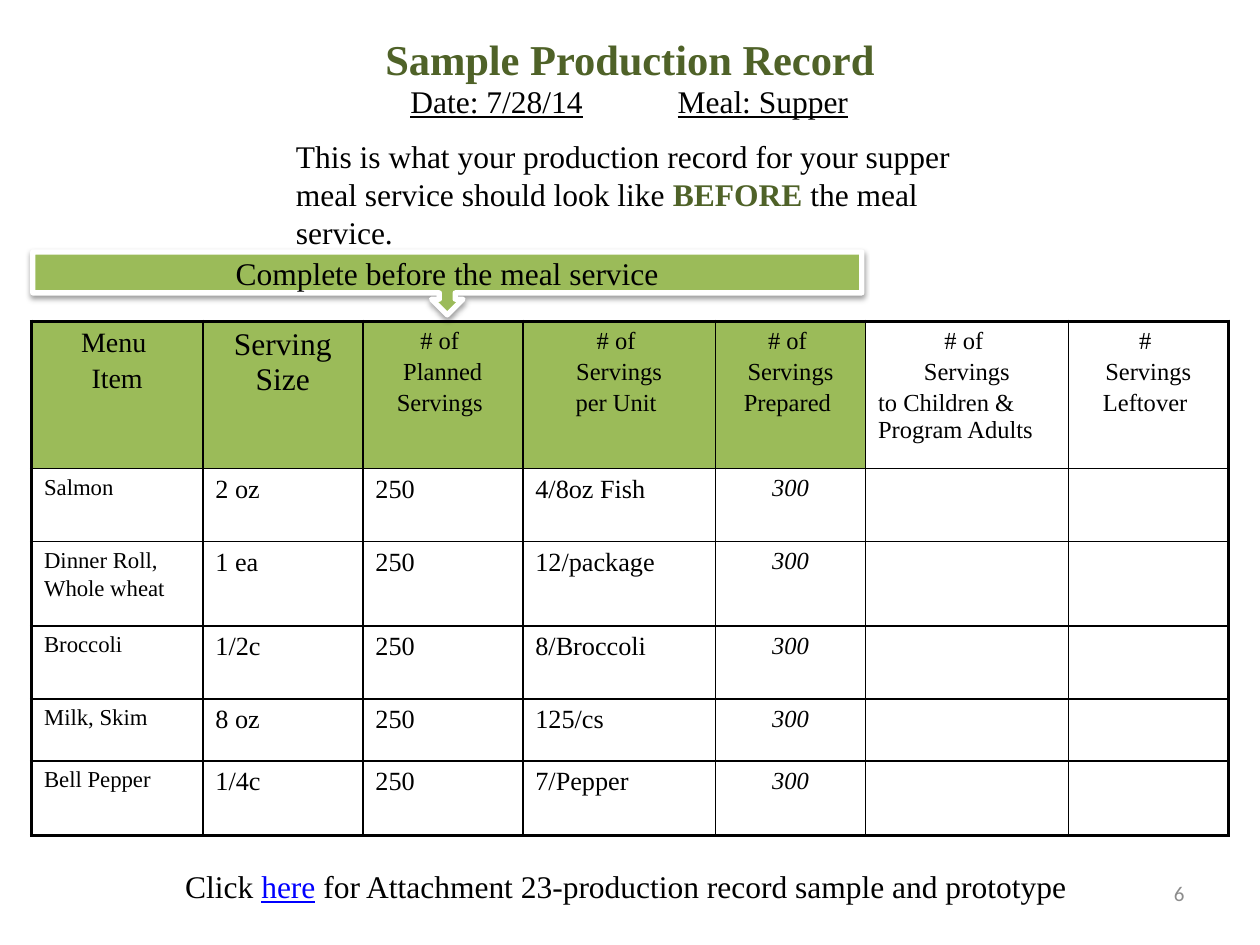
from lxml import etree
from pptx import Presentation
from pptx.dml.color import RGBColor
from pptx.enum.shapes import MSO_SHAPE
from pptx.enum.text import MSO_ANCHOR, PP_ALIGN
from pptx.oxml.ns import qn
from pptx.util import Inches, Pt

LEFT, MID, RIGHT = PP_ALIGN.LEFT, PP_ALIGN.CENTER, PP_ALIGN.RIGHT
TOP, CENTER = MSO_ANCHOR.TOP, MSO_ANCHOR.MIDDLE
CALLOUT = MSO_SHAPE.DOWN_ARROW_CALLOUT
SERIF = "Times New Roman"
BLACK, WHITE, GREEN, OLIVE = "000000", "FFFFFF", "9BBB59", "4F6228"
BLUE, GRAY = "0000FF", "8C8C8C"
THIN, THICK = 1, 2.25

BOXES = [
    ((0.5, 0.21, 9, 0.49), MID, TOP, 24.3,
     [("Sample Production Record", OLIVE, {"bold": True})]),
    ((2.25, 1.04, 5.92, 1.01), LEFT, TOP, 18,
     [("This is what your production record for your supper meal service "
       "should look like ", BLACK, {}),
      ("BEFORE ", OLIVE, {"bold": True}),
      ("the meal service.", BLACK, {})]),
    ((0.29, 6.83, 9.42, 0.4), MID, TOP, 18,
     [("Click ", BLACK, {}),
      ("here", BLUE, {"underline": True}),
      (" for Attachment 23-production record sample and prototype ", BLACK, {})]),
    ((7.17, 6.83, 2.33, 0.52), RIGHT, CENTER, 12,
     [("6", GRAY, {"name": "Calibri"})]),
]
DATE = "Date: 7/28/14\tMeal: Supper"
DATE_BOX, DATE_TAB = (3.16, 0.6, 3.9, 0.39), 2.12
BANNER = "Complete before the meal service"

HEADS = [
    (16, ["Menu ", "Item"]),
    (18, ["Serving Size"]),
    (14, ["# of ", "Planned", "Servings "]),
    (14, ["# of ", "Servings", "per Unit "]),
    (14, ["# of ", "Servings", "Prepared "]),
    (14, ["# of ", "Servings", "to Children & Program Adults "]),
    (14, ["# ", "Servings", "Leftover "]),
]
MEALS = [
    (["Salmon"], "2 oz", "250", "4/8oz Fish", "300"),
    (["Dinner Roll,", "Whole wheat"], "1 ea", "250", "12/package", "300"),
    (["Broccoli"], "1/2c", "250", "8/Broccoli", "300"),
    (["Milk, Skim"], "8 oz", "250", "125/cs", "300"),
    (["Bell Pepper"], "1/4c", "250", "7/Pepper", "300"),
]
COLS = [1.36, 1.27, 1.27, 1.53, 1.19, 1.61, 1.27]
ROWS = [1.17, 0.58, 0.67, 0.58, 0.49, 0.59]
FILLED = 5


def rgb(code):
    return RGBColor.from_string(code)


def add_run(para, text, size, color=BLACK, style=None):
    run = para.add_run()
    run.text = text
    run.font.color.rgb = rgb(color)
    look = {"name": SERIF, "size": Pt(size), **(style or {})}
    for key, value in look.items():
        setattr(run.font, key, value)


def add_box(slide, place, align, anchor, size, runs):
    box = slide.shapes.add_textbox(*map(Inches, place))
    frame = box.text_frame
    frame.word_wrap = True
    frame.vertical_anchor = anchor
    para = frame.paragraphs[0]
    para.alignment = align
    for text, color, style in runs:
        add_run(para, text, size, color, style)
    return para


def add_node(parent, tag, **attrs):
    return etree.SubElement(parent, qn(tag), attrs)


def add_date(slide):
    runs = [(DATE, BLACK, {"underline": True})]
    para = add_box(slide, DATE_BOX, LEFT, TOP, 18, runs)
    tabs = add_node(para._p.get_or_add_pPr(), "a:tabLst")
    add_node(tabs, "a:tab", pos=str(Inches(DATE_TAB)), algn="l")


def add_banner(slide):
    place = map(Inches, (0.26, 2, 6.58, 0.5))
    shape = slide.shapes.add_shape(CALLOUT, *place)
    shape.fill.solid()
    shape.fill.fore_color.rgb = rgb(GREEN)
    shape.line.color.rgb = rgb(WHITE)
    shape.line.width = Pt(3)
    shape.shadow.inherit = False
    glow = add_node(shape._element.spPr.find(qn("a:effectLst")), "a:outerShdw",
                    blurRad=str(Pt(3.1)), dist=str(Pt(1.6)),
                    dir="5400000", rotWithShape="0")
    tint = add_node(glow, "a:srgbClr", val=BLACK)
    add_node(tint, "a:alpha", val="38000")
    frame = shape.text_frame
    frame.word_wrap = True
    frame.vertical_anchor = CENTER
    frame.paragraphs[0].alignment = MID
    add_run(frame.paragraphs[0], BANNER, 18)


def fill_cell(cell, lines, size, align, style=None):
    frame = cell.text_frame
    for i, text in enumerate(lines):
        para = frame.add_paragraph() if i else frame.paragraphs[0]
        para.alignment = LEFT if text.startswith("to ") else align
        if i:
            para.space_before = Pt(round(size * 0.16, 1))
        add_run(para, text, size, BLACK, style)


def add_edges(cell, row, col):
    outer = {"L": col == 0, "R": col == len(COLS) - 1,
             "T": row == 0, "B": row == len(ROWS) - 1}
    props = cell._tc.get_or_add_tcPr()
    for i, (side, edge) in enumerate(outer.items()):
        line = etree.Element(qn(f"a:ln{side}"), w=str(Pt(THICK if edge else THIN)))
        add_node(add_node(line, "a:solidFill"), "a:srgbClr", val=BLACK)
        props.insert(i, line)


def add_grid(slide):
    place = map(Inches, (0.25, 2.55, sum(COLS), sum(ROWS)))
    table = slide.shapes.add_table(len(ROWS), len(COLS), *place).table
    for col, width in zip(table.columns, COLS):
        col.width = Inches(width)
    for row, height in zip(table.rows, ROWS):
        row.height = Inches(height)
    for r in range(len(ROWS)):
        for c in range(len(COLS)):
            cell = table.cell(r, c)
            cell.fill.solid()
            green = r == 0 and c < FILLED
            cell.fill.fore_color.rgb = rgb(GREEN if green else WHITE)
            add_edges(cell, r, c)
    for c, (size, lines) in enumerate(HEADS):
        fill_cell(table.cell(0, c), lines, size, MID, {"bold": False})
    for r, (item, *facts, made) in enumerate(MEALS, 1):
        fill_cell(table.cell(r, 0), item, 13, LEFT, {"bold": False})
        for c, fact in enumerate(facts, 1):
            fill_cell(table.cell(r, c), [fact], 15, LEFT)
        fill_cell(table.cell(r, 4), [made], 14, MID, {"italic": True})


def main():
    deck = Presentation()
    deck.slide_width, deck.slide_height = Inches(10), Inches(7.5)
    slide = deck.slides.add_slide(deck.slide_layouts[6])
    add_grid(slide)
    for box in BOXES:
        add_box(slide, *box)
    add_date(slide)
    add_banner(slide)
    deck.save("out.pptx")


if __name__ == "__main__":
    main()
